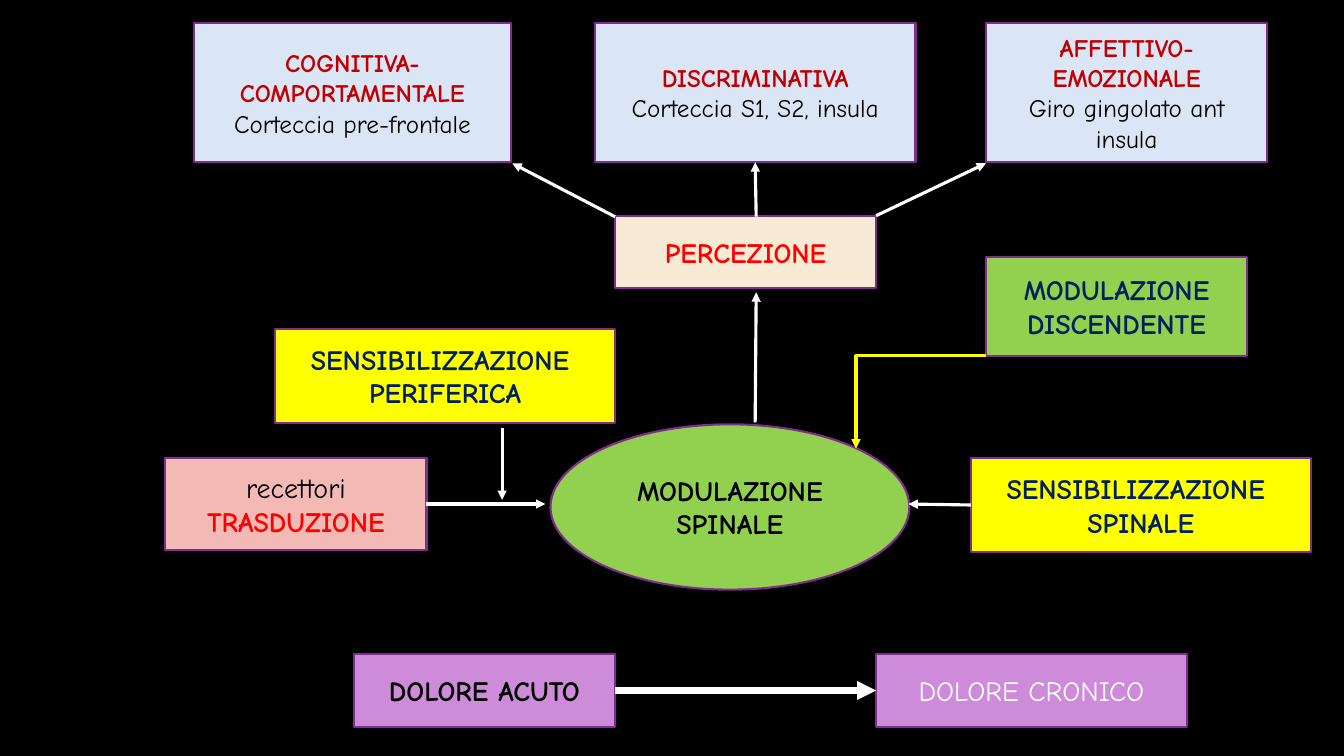
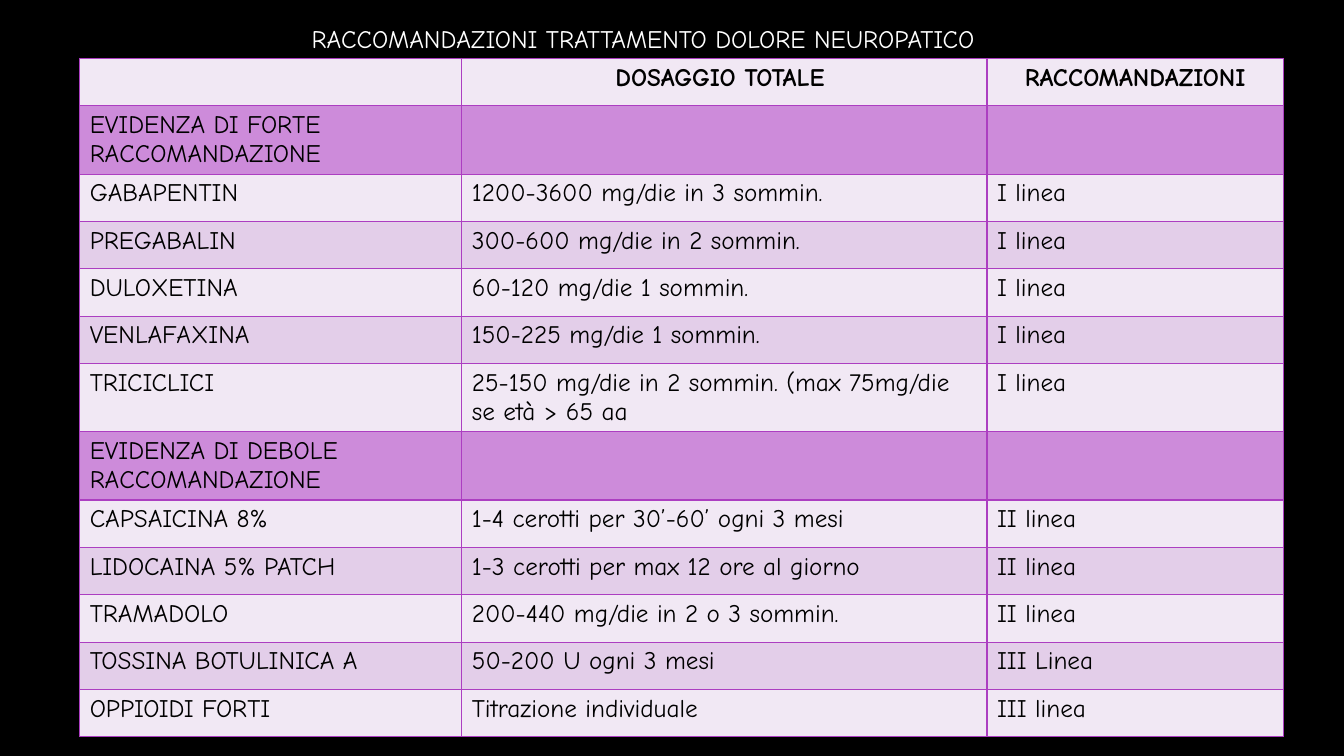
from dataclasses import dataclass

from lxml import etree
from pptx import Presentation
from pptx.dml.color import RGBColor
from pptx.enum.shapes import MSO_CONNECTOR as Conn, MSO_SHAPE as Shape
from pptx.enum.text import MSO_ANCHOR as Anchor, MSO_AUTO_SIZE as AutoSize, PP_ALIGN as Align
from pptx.oxml.ns import qn
from pptx.util import Inches, Pt


@dataclass(frozen=True)
class Theme:
    font: str = "Comic Neue"
    body: int = 18
    label: int = 20
    black: str = "000000"
    white: str = "FFFFFF"
    red: str = "FF0000"
    dark_red: str = "C00000"
    navy: str = "002060"
    yellow: str = "FFFF00"
    green: str = "92D050"
    pink: str = "F3BAB5"
    cream: str = "F8EBD6"
    sky: str = "DAE5F6"
    orchid: str = "CD8BDA"
    outline: str = "7F2E8F"
    grid: str = "AC3EC1"
    band_light: str = "F1E8F4"
    band_dark: str = "E3CEE9"


T = Theme()
TOP, LEFT, BOTTOM, RIGHT = range(4)

COLUMNS = (3.79, 5.21, 2.94)
ROW_HEIGHT, SECTION_HEIGHT = 0.47, 0.66
ROWS = [
    ("", "DOSAGGIO TOTALE ", "RACCOMANDAZIONI"),
    ("EVIDENZA DI FORTE RACCOMANDAZIONE",),
    ("GABAPENTIN", "1200-3600 mg/die in 3 sommin.", "I linea"),
    ("PREGABALIN", "300-600 mg/die in 2 sommin.", "I linea"),
    ("DULOXETINA", "60-120 mg/die 1 sommin.", "I linea"),
    ("VENLAFAXINA", "150-225 mg/die 1 sommin.", "I linea"),
    ("TRICICLICI", "25-150 mg/die in 2 sommin. (max 75mg/die se età > 65 aa", "I linea"),
    ("EVIDENZA DI DEBOLE RACCOMANDAZIONE",),
    ("CAPSAICINA 8%", "1-4 cerotti per 30’-60’ ogni 3 mesi", "II linea"),
    ("LIDOCAINA 5% PATCH", "1-3 cerotti per max 12 ore al giorno", "II linea"),
    ("TRAMADOLO", "200-440 mg/die in 2 o 3 sommin.", "II linea"),
    ("TOSSINA BOTULINICA A", "50-200 U ogni 3 mesi", "III Linea"),
    ("OPPIOIDI FORTI", "Titrazione individuale", "III linea"),
]


def rgb(value):
    return RGBColor.from_string(value)


def style(p, size, color, bold=False, align=Align.LEFT):
    p.alignment = align
    p.font.name = T.font
    p.font.size = Pt(size)
    p.font.bold = bold
    p.font.color.rgb = rgb(color)


def add_box(s, at, fill, lines, size=T.label, kind=Shape.RECTANGLE):
    sp = s.shapes.add_shape(kind, *map(Inches, at))
    sp.shadow.inherit = False
    sp.fill.solid()
    sp.fill.fore_color.rgb = rgb(fill)
    sp.line.color.rgb = rgb(T.outline)
    sp.line.width = Pt(1.5)
    tf = sp.text_frame
    tf.word_wrap = True
    tf.vertical_anchor = Anchor.MIDDLE
    tf.text = "\n".join(text for text, _, _ in lines)
    for p, (_, color, bold) in zip(tf.paragraphs, lines):
        style(p, size, color, bold, Align.CENTER)
    return sp


def side(sp, site):
    x = {LEFT: 0, RIGHT: sp.width}.get(site, sp.width // 2)
    y = {TOP: 0, BOTTOM: sp.height}.get(site, sp.height // 2)
    return sp.left + x, sp.top + y


def add_arrow(s, start, end, color=T.white, width=2.25, kind=Conn.STRAIGHT,
              begin_site=None, end_site=None):
    begin = map(Inches, start) if begin_site is None else side(start, begin_site)
    finish = map(Inches, end) if end_site is None else side(end, end_site)
    c = s.shapes.add_connector(kind, *begin, *finish)
    if begin_site is not None:
        c.begin_connect(start, begin_site)
    if end_site is not None:
        c.end_connect(end, end_site)
    c.line.color.rgb = rgb(color)
    c.line.width = Pt(width)
    etree.SubElement(c.line._get_or_add_ln(), qn("a:tailEnd"), type="triangle")
    sp_pr = c._element.spPr
    etree.SubElement(sp_pr, qn("a:effectLst"))
    if kind == Conn.ELBOW:
        sp_pr.find(qn("a:prstGeom")).set("prst", "bentConnector2")


def add_title(s, text, at):
    sp = s.shapes.title
    sp.left, sp.top, sp.width, sp.height = map(Inches, at)
    tf = sp.text_frame
    tf.text = text
    tf.word_wrap = True
    tf.auto_size = AutoSize.NONE
    tf.vertical_anchor = Anchor.TOP
    style(tf.paragraphs[0], T.body, T.white)


def format_cell(cell, text, fill, header):
    tc_pr = cell._tc.get_or_add_tcPr()
    for edge in ("lnL", "lnR", "lnT", "lnB"):
        ln = etree.SubElement(tc_pr, qn(f"a:{edge}"), w=str(Pt(1)))
        solid = etree.SubElement(ln, qn("a:solidFill"))
        etree.SubElement(solid, qn("a:srgbClr"), val=T.grid)
    cell.fill.solid()
    cell.fill.fore_color.rgb = rgb(fill)
    cell.text = text
    style(cell.text_frame.paragraphs[0], T.body, T.black, header,
          Align.CENTER if header else Align.LEFT)


def add_dosage_table(s, left, top):
    heights = [SECTION_HEIGHT if len(row) == 1 or len(row[1]) > 45 else ROW_HEIGHT
               for row in ROWS]
    heights[6] = ROW_HEIGHT
    size = map(Inches, (left, top, sum(COLUMNS), sum(heights)))
    table = s.shapes.add_table(len(ROWS), len(COLUMNS), *size).table
    table.first_row = table.horz_banding = False
    for column, width in zip(table.columns, COLUMNS):
        column.width = Inches(width)
    for i, (row, height) in enumerate(zip(ROWS, heights)):
        table.rows[i].height = Inches(height)
        band = T.band_dark if i % 2 else T.band_light
        fill = T.orchid if len(row) == 1 else band
        for j in range(len(COLUMNS)):
            format_cell(table.cell(i, j), row[j] if j < len(row) else "", fill, i == 0)


def build_pathway(s):
    receptors = add_box(s, (1.64, 4.54, 2.59, 0.92), T.pink,
                        [("recettori", T.black, False), ("TRASDUZIONE", T.red, True)])
    add_box(s, (9.78, 2.55, 2.59, 0.98), T.green, [("MODULAZIONE DISCENDENTE", T.navy, True)])
    add_box(s, (6.1, 2.14, 2.59, 0.72), T.cream, [("PERCEZIONE", T.red, True)])
    _, discriminative, _ = [
        add_box(s, (left, 0.23, width, 1.38), T.sky,
                [(name, T.dark_red, True), (area, T.black, False)], T.body)
        for left, width, name, area in (
            (9.78, 2.79, "AFFETTIVO-EMOZIONALE", "Giro gingolato ant insula"),
            (5.9, 3.18, "DISCRIMINATIVA", "Corteccia S1, S2, insula"),
            (1.92, 3.15, "COGNITIVA-COMPORTAMENTALE", "Corteccia pre-frontale"),
        )
    ]
    chronic = add_box(s, (8.69, 6.49, 3.08, 0.72), T.orchid, [("DOLORE CRONICO", T.white, False)])
    acute = add_box(s, (3.51, 6.49, 2.59, 0.72), T.orchid, [("DOLORE ACUTO", T.black, True)])
    add_box(s, (2.73, 3.26, 3.37, 0.94), T.yellow,
            [("SENSIBILIZZAZIONE ", T.navy, True), ("PERIFERICA", T.navy, True)])
    add_box(s, (5.46, 4.21, 3.56, 1.64), T.green,
            [("MODULAZIONE", T.black, True), ("SPINALE", T.black, True)], kind=Shape.OVAL)
    spinal = add_box(s, (9.63, 4.54, 3.37, 0.94), T.yellow,
                     [("SENSIBILIZZAZIONE ", T.navy, True), ("SPINALE", T.navy, True)])

    add_arrow(s, (8.69, 2.14), (9.78, 1.62))
    add_arrow(s, acute, chronic, width=4.5, begin_site=RIGHT, end_site=LEFT)
    add_arrow(s, (7.5, 2.15), discriminative, end_site=BOTTOM)
    add_arrow(s, (6.1, 2.15), (5.08, 1.62))
    add_arrow(s, spinal, (9.01, 5), begin_site=LEFT)
    add_arrow(s, (4.98, 4.25), (4.98, 4.96))
    add_arrow(s, receptors, (5.41, 5), begin_site=RIGHT)
    add_arrow(s, (9.78, 3.53), (8.49, 4.45), color=T.yellow, kind=Conn.ELBOW)
    add_arrow(s, (7.49, 4.19), (7.5, 2.9))


def build_treatment(s):
    add_title(s, "RACCOMANDAZIONI TRATTAMENTO DOLORE NEUROPATICO", (2.99, 0.18, 8.03, 0.4))
    add_dosage_table(s, 0.79, 0.58)


def main():
    prs = Presentation()
    prs.slide_width, prs.slide_height = Inches(13.33), Inches(7.5)
    background = prs.slide_master.background.fill
    background.solid()
    background.fore_color.rgb = rgb(T.black)
    title_only, blank = prs.slide_layouts[5], prs.slide_layouts[6]
    build_pathway(prs.slides.add_slide(blank))
    build_treatment(prs.slides.add_slide(title_only))
    prs.save("out.pptx")


if __name__ == "__main__":
    main()
